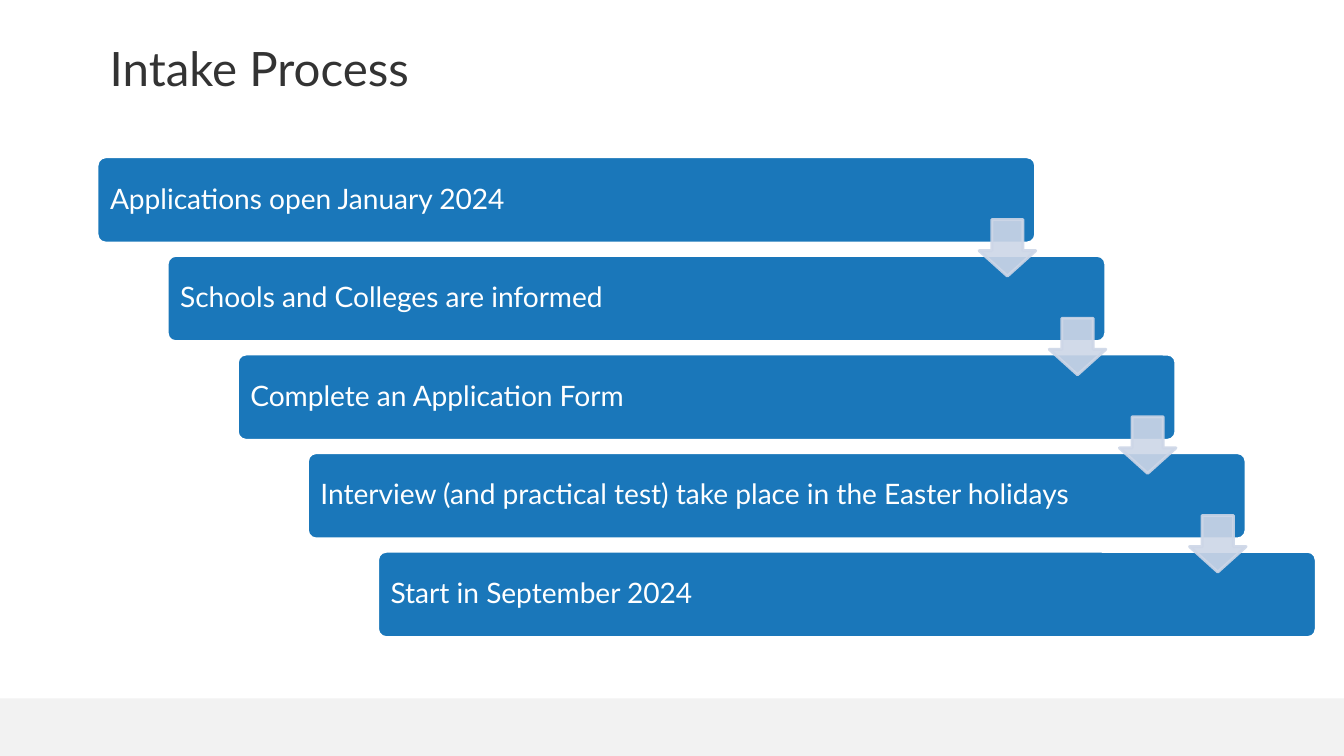
from lxml.etree import SubElement
from pptx import Presentation
from pptx.dml.color import RGBColor
from pptx.enum.shapes import MSO_SHAPE as Shape
from pptx.enum.text import MSO_ANCHOR as Anchor, PP_ALIGN as Align
from pptx.oxml.ns import qn
from pptx.util import Inches, Pt

TITLE = "Intake Process"
STEPS = [
    "Applications open January 2024",
    "Schools and Colleges are informed",
    "Complete an Application Form",
    "Interview (and practical test) take place in the Easter holidays",
    "Start in September 2024",
]

SLIDE_WIDTH, SLIDE_HEIGHT = 12.6, 7.09
FOOTER_TOP = 6.55
FIRST_LEFT, FIRST_TOP = 0.91, 1.47
LAST_LEFT, LAST_TOP = 3.54, 5.17
BAR_WIDTH, BAR_HEIGHT = 8.8, 0.81
ARROW_LEFT, ARROW_TOP, ARROW_SIZE = 9.18, 2.06, 0.53
ARROW_OPACITY = 90

WHITE, FOOTER_GREY, TITLE_GREY = "FFFFFF", "F2F2F2", "333333"
BAR_BLUE, ARROW_BLUE = "1A77BA", "CDD6E7"

TITLE_FONT = {"name": "Lato", "size": Pt(32)}
STEP_FONT = {"name": "Lato", "size": Pt(19)}
TITLE_FRAME = {
    "word_wrap": True,
    "vertical_anchor": Anchor.MIDDLE,
    "margin_left": Inches(0.1),
    "margin_right": Inches(0.1),
    "margin_top": Inches(0.05),
    "margin_bottom": Inches(0.05),
}
STEP_FRAME = {**TITLE_FRAME, "margin_top": Inches(0.1), "margin_bottom": Inches(0.1)}


def set_color(color_format, value):
    color_format.rgb = RGBColor.from_string(value)


def set_attributes(target, values):
    for name, value in values.items():
        setattr(target, name, value)


def set_opacity(fill_element, percent):
    color = fill_element.find(".//" + qn("a:srgbClr"))
    SubElement(color, qn("a:alpha"), val=str(percent * 1000))


def add_block(slide, kind, box, fill, line=None, adjustments=()):
    shape = slide.shapes.add_shape(kind, *map(Inches, box))
    shape.shadow.inherit = False
    shape.fill.solid()
    set_color(shape.fill.fore_color, fill)
    if line:
        shape.line.width = Pt(2)
        shape.line.fill.solid()
        set_color(shape.line.color, line)
    else:
        shape.line.fill.background()
    for index, value in enumerate(adjustments):
        shape.adjustments[index] = value
    return shape


def write_text(shape, text, frame_format, font_format, color):
    frame = shape.text_frame
    set_attributes(frame, frame_format)
    paragraph = frame.paragraphs[0]
    paragraph.text = text
    paragraph.alignment = Align.LEFT
    paragraph.line_spacing = 0.9
    font = paragraph.runs[0].font
    set_attributes(font, font_format)
    set_color(font.color, color)


def add_arrow(slide, left, top):
    box = (left, top, ARROW_SIZE, ARROW_SIZE)
    arrow = add_block(slide, Shape.DOWN_ARROW, box, ARROW_BLUE, ARROW_BLUE)
    arrow.adjustments[0] = 0.55
    arrow.adjustments[1] = 0.45
    properties = arrow._element.spPr
    set_opacity(properties.find(qn("a:solidFill")), ARROW_OPACITY)
    set_opacity(properties.find(qn("a:ln")), ARROW_OPACITY)


def main():
    presentation = Presentation()
    presentation.slide_width = Inches(SLIDE_WIDTH)
    presentation.slide_height = Inches(SLIDE_HEIGHT)
    slide = presentation.slides.add_slide(presentation.slide_layouts[6])

    footer_box = (0, FOOTER_TOP, SLIDE_WIDTH, SLIDE_HEIGHT - FOOTER_TOP)
    add_block(slide, Shape.RECTANGLE, footer_box, FOOTER_GREY)
    title = slide.shapes.add_textbox(*map(Inches, (0.93, 0, 11.41, 1.33)))
    write_text(title, TITLE, TITLE_FRAME, TITLE_FONT, TITLE_GREY)

    gaps = len(STEPS) - 1
    shift_right = (LAST_LEFT - FIRST_LEFT) / gaps
    shift_down = (LAST_TOP - FIRST_TOP) / gaps
    offsets = [(i * shift_right, i * shift_down) for i in range(len(STEPS))]

    for step, (right, down) in zip(STEPS, offsets):
        box = (FIRST_LEFT + right, FIRST_TOP + down, BAR_WIDTH, BAR_HEIGHT)
        bar = add_block(slide, Shape.ROUNDED_RECTANGLE, box, BAR_BLUE, WHITE, [0.1])
        write_text(bar, step, STEP_FRAME, STEP_FONT, WHITE)
    for right, down in offsets[:-1]:
        add_arrow(slide, ARROW_LEFT + right, ARROW_TOP + down)

    presentation.save("out.pptx")


if __name__ == "__main__":
    main()
